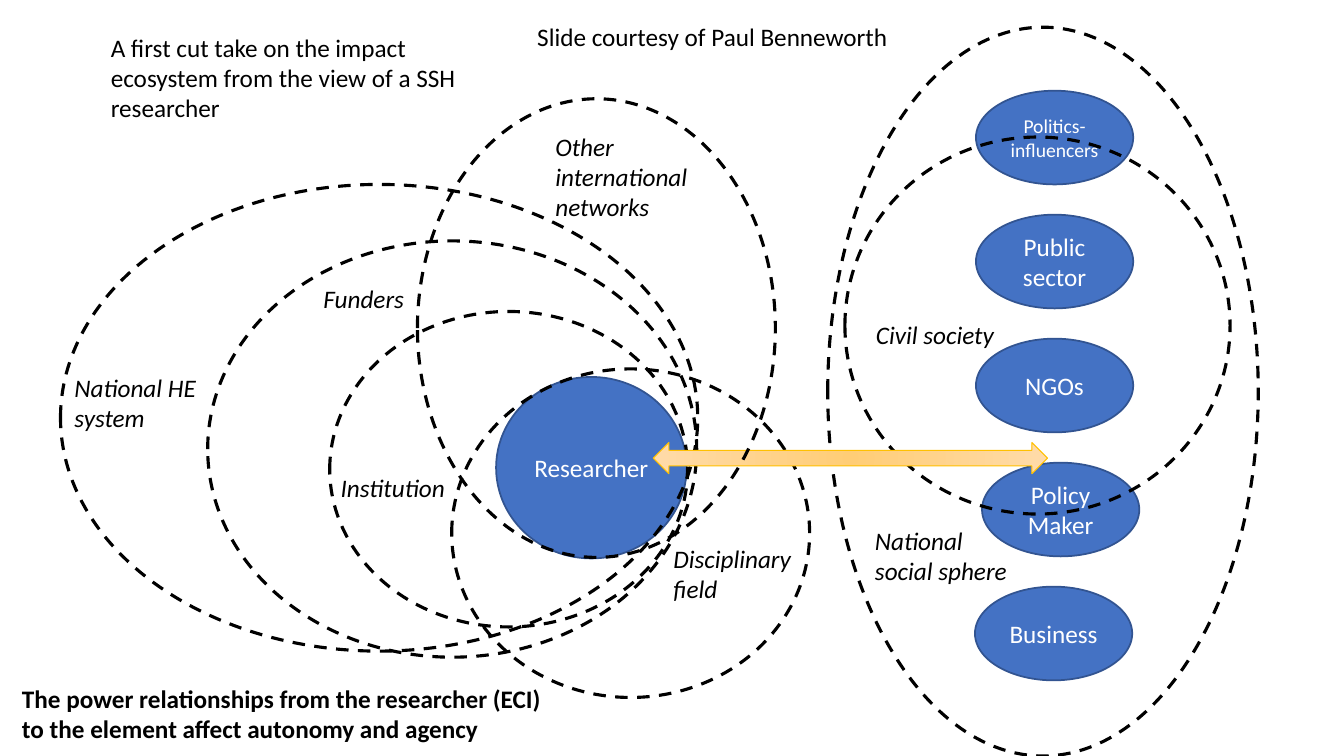
import lxml.etree
import pptx
import pptx.dml.color
import pptx.enum.dml
import pptx.enum.shapes
import pptx.enum.text
import pptx.oxml.ns
import pptx.util

Inches = pptx.util.Inches
RGBColor = pptx.dml.color.RGBColor
Shapes = pptx.enum.shapes.MSO_SHAPE
Align = pptx.enum.text.PP_ALIGN
qn = pptx.oxml.ns.qn

BLUE = RGBColor(0x44, 0x72, 0xC4)
DARK_BLUE = RGBColor(0x32, 0x54, 0x91)
WHITE = RGBColor(0xFF, 0xFF, 0xFF)
BLACK = RGBColor(0, 0, 0)
GOLD = RGBColor(0xFF, 0xC0, 0)
ORANGE = RGBColor(0xFF, 0xCD, 0x76)
PALE_ORANGE = RGBColor(0xFF, 0xDB, 0xA9)

SOCIETY_ACTORS = [
    ("Politics-influencers", 9.68, 14),
    ("Public sector", 9.68, 18),
    ("NGOs", 9.68, 18),
    ("Policy Maker", 9.74, 18),
    ("Business", 9.67, 18),
]
ACTOR_TOP, ACTOR_PITCH = 0.9, 1.23

RINGS = [
    (3.27, 3.09, 3.55, 3.13),
    (2.06, 2.39, 4.85, 4.13),
    (4.48, 3.66, 3.55, 3.26),
    (0.6, 1.83, 6.32, 4.63),
    (8.21, 0.27, 4.27, 7.23),
    (8.38, 1.36, 3.82, 3.74),
]
INTERNATIONAL_RING = (4.14, 0.98, 3.55, 4.55)

RING_LABELS = [
    ("National HE system", 0.64, 3.64, 0.71),
    ("Institution", 3.28, 4.64, 0.4),
    ("Disciplinary field", 6.58, 5.34, 0.71),
    ("Civil society", 8.59, 3.12, 0.4),
    ("National social sphere", 8.58, 5.16, 0.71),
    ("Funders", 3.11, 2.76, 0.4),
    ("Other international networks", 5.41, 1.25, 1.01),
]


def add_outlined_shape(slide, kind, box, line_color, line_width):
    shape = slide.shapes.add_shape(kind, *map(Inches, box))
    shape.shadow.inherit = False
    shape.line.color.rgb = line_color
    shape.line.width = pptx.util.Pt(line_width)
    return shape


def write_run(paragraph, text, size, color):
    run = paragraph.add_run()
    run.text = text
    run.font.name = "Calibri"
    run.font.size = pptx.util.Pt(size)
    run.font.color.rgb = color
    return run


def add_actor(slide, text, box, size=18):
    shape = add_outlined_shape(slide, Shapes.OVAL, box, DARK_BLUE, 1.25)
    shape.fill.solid()
    shape.fill.fore_color.rgb = BLUE
    frame = shape.text_frame
    frame.word_wrap = True
    frame.vertical_anchor = pptx.enum.text.MSO_ANCHOR.MIDDLE
    paragraph = frame.paragraphs[0]
    paragraph.alignment = Align.CENTER
    write_run(paragraph, text, size, WHITE)


def add_ring(slide, box):
    shape = add_outlined_shape(slide, Shapes.OVAL, box, BLACK, 2.25)
    shape.fill.background()
    shape.line.dash_style = pptx.enum.dml.MSO_LINE.DASH


def add_label(slide, text, box, bold=False, italic=False):
    frame = slide.shapes.add_textbox(*map(Inches, box)).text_frame
    frame.word_wrap = True
    frame.auto_size = pptx.enum.text.MSO_AUTO_SIZE.SHAPE_TO_FIT_TEXT
    run = write_run(frame.paragraphs[0], text, 18, BLACK)
    run.font.bold = bold
    run.font.italic = italic


def add_exchange_arrow(slide, box):
    arrow = add_outlined_shape(slide, Shapes.LEFT_RIGHT_ARROW, box, GOLD, 0.75)
    arrow.fill.gradient()
    for stop, color in zip(arrow.fill.gradient_stops, (ORANGE, PALE_ORANGE)):
        stop.color.rgb = color
    gradient = arrow.element.spPr.find(qn("a:gradFill"))
    gradient.remove(gradient.find(qn("a:lin")))
    circle = lxml.etree.SubElement(gradient, qn("a:path"), {"path": "circle"})
    lxml.etree.SubElement(circle, qn("a:fillToRect"), dict.fromkeys("ltrb", "100000"))


def main():
    presentation = pptx.Presentation()
    presentation.slide_width = Inches(13.33)
    presentation.slide_height = Inches(7.5)
    slide = presentation.slides.add_slide(presentation.slide_layouts[6])

    add_actor(slide, "Researcher", (4.92, 3.74, 1.89, 1.8))
    for index, (text, left, size) in enumerate(SOCIETY_ACTORS):
        top = ACTOR_TOP + index * ACTOR_PITCH
        add_actor(slide, text, (left, top, 1.56, 0.93), size)

    for box in RINGS:
        add_ring(slide, box)
    add_exchange_arrow(slide, (6.48, 4.39, 3.91, 0.31))
    add_ring(slide, INTERNATIONAL_RING)

    for text, left, top, height in RING_LABELS:
        add_label(slide, text, (left, top, 1.63, height), italic=True)
    add_label(slide, "A first cut take on the impact ecosystem from the view of a SSH researcher",
              (1, 0.27, 4.05, 1.01))
    add_label(slide, "Slide courtesy of Paul Benneworth", (5.23, 0.16, 4.05, 0.4))
    add_label(slide, "The power relationships from the researcher (ECI) to the element "
              "affect autonomy and agency", (0.12, 6.73, 5.56, 0.71), bold=True)

    presentation.save("out.pptx")


if __name__ == "__main__":
    main()
